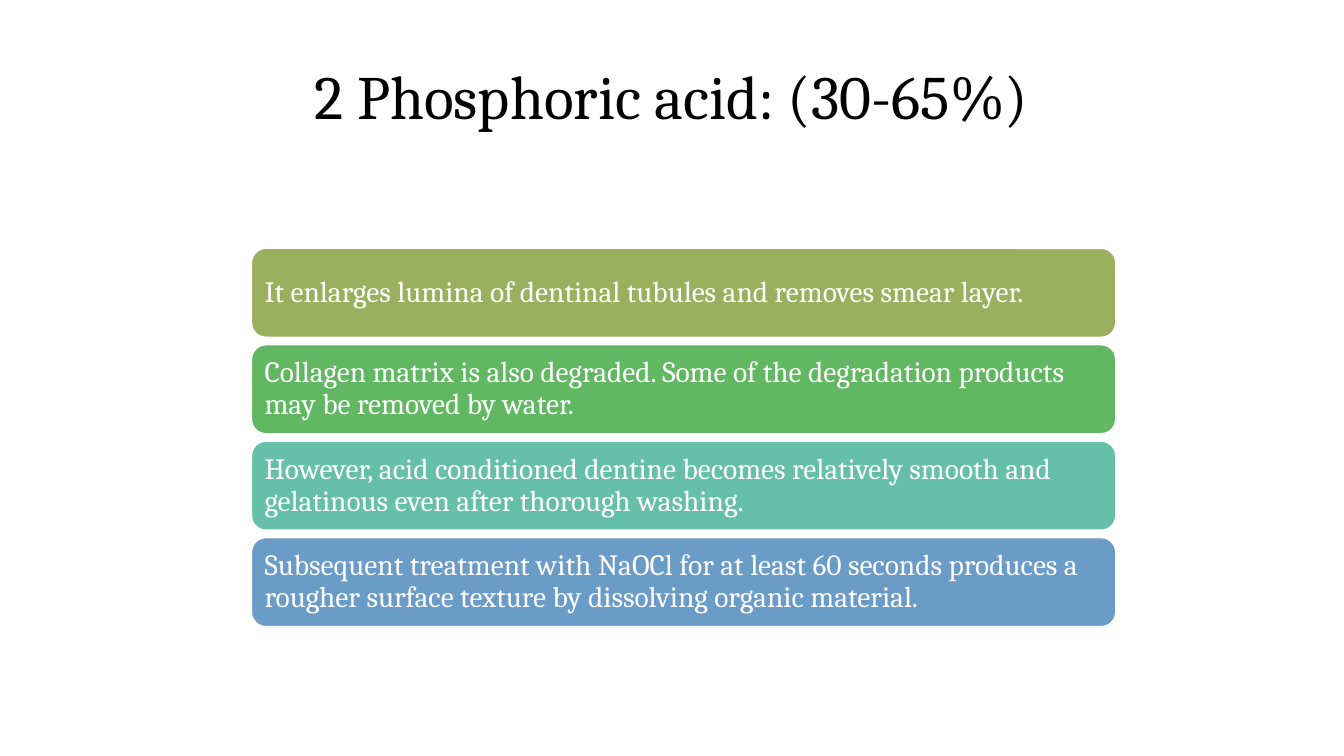
from pptx import Presentation
from pptx.dml.color import RGBColor
from pptx.enum.shapes import MSO_SHAPE
from pptx.enum.text import MSO_ANCHOR, PP_ALIGN
from pptx.util import Inches, Pt

ROUNDED = MSO_SHAPE.ROUNDED_RECTANGLE
MIDDLE = MSO_ANCHOR.MIDDLE
LEFT, CENTER = PP_ALIGN.LEFT, PP_ALIGN.CENTER

FONT = "Cambria"
COLORS = {
    "black": "000000",
    "white": "FFFFFF",
    "olive": "9BB05E",
    "green": "62B862",
    "teal": "66C0A8",
    "blue": "6B9BC7",
}
EFFECTS = [
    ("olive", "It enlarges lumina of dentinal tubules and removes smear layer."),
    ("green", "Collagen matrix is also degraded. Some of the degradation products "
              "may be removed by water."),
    ("teal", "However, acid conditioned dentine becomes relatively smooth and "
             "gelatinous even after thorough washing."),
    ("blue", "Subsequent treatment with NaOCl for at least 60 seconds produces a "
             "rougher surface texture by dissolving organic material."),
]


def color(name):
    """Return the named colour."""
    return RGBColor.from_string(COLORS[name])


def write_text(shape, text, size, font_color, align=LEFT, inset=0.1, line_spacing=1.0):
    """Write one vertically centred paragraph into a shape."""
    frame = shape.text_frame
    frame.word_wrap = True
    frame.vertical_anchor = MIDDLE
    frame.margin_left = frame.margin_right = Inches(inset)
    frame.margin_top = frame.margin_bottom = Inches(inset)
    paragraph = frame.paragraphs[0]
    paragraph.alignment = align
    paragraph.line_spacing = line_spacing
    run = paragraph.add_run()
    run.text = text
    run.font.name = FONT
    run.font.size = Pt(size)
    run.font.color.rgb = color(font_color)


def add_title(slide, left, top, width, height):
    """Place the slide title in the given box."""
    box = slide.shapes.add_textbox(Inches(left), Inches(top), Inches(width), Inches(height))
    write_text(box, "2 Phosphoric acid: (30-65%)", 44, "black", align=CENTER, inset=0.05)


def add_effect_bars(slide, left, top, width, height, bar_height=0.89):
    """Spread the coloured effect bars evenly down the given box."""
    pitch = (height - bar_height) / (len(EFFECTS) - 1)
    for index, (fill, text) in enumerate(EFFECTS):
        bar = slide.shapes.add_shape(
            ROUNDED, Inches(left), Inches(top + index * pitch), Inches(width), Inches(bar_height))
        bar.shadow.inherit = False
        bar.fill.solid()
        bar.fill.fore_color.rgb = color(fill)
        bar.line.color.rgb = color("white")
        bar.line.width = Pt(1.5)
        write_text(bar, text, 21, "white", inset=0.09, line_spacing=0.9)


def main():
    """Build and save the presentation."""
    presentation = Presentation()
    presentation.slide_width = Inches(13.33)
    presentation.slide_height = Inches(7.5)
    slide = presentation.slides.add_slide(presentation.slide_layouts[6])
    add_title(slide, 0.8, 0.48, 11.73, 0.92)
    add_effect_bars(slide, 2.49, 2.46, 8.58, 3.76)
    presentation.save("out.pptx")


if __name__ == "__main__":
    main()
